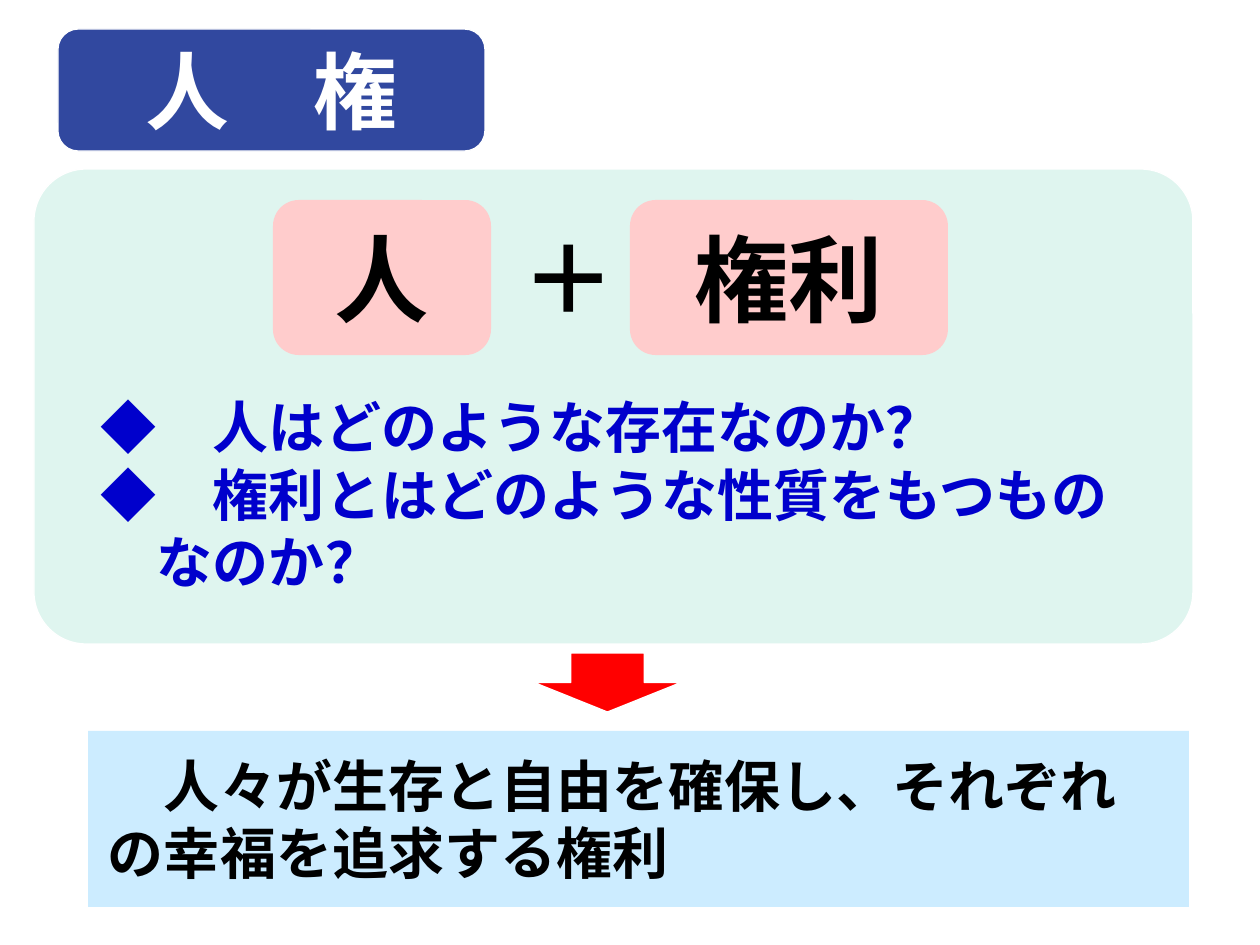
from pptx import Presentation
from pptx.dml.color import RGBColor
from pptx.enum.shapes import MSO_SHAPE as Shape
from pptx.enum.text import MSO_ANCHOR as Anchor, PP_ALIGN as Align
from pptx.oxml.ns import qn
from pptx.util import Emu, Pt
from lxml.etree import SubElement

WHITE = RGBColor(0xFF, 0xFF, 0xFF)
BLACK = RGBColor(0x00, 0x00, 0x00)
MINT = RGBColor(0xDF, 0xF5, 0xEF)
NAVY = RGBColor(0x31, 0x48, 0x9F)
PINK = RGBColor(0xFF, 0xCC, 0xCC)
BLUE = RGBColor(0x00, 0x00, 0xCC)
SKY = RGBColor(0xCC, 0xEC, 0xFF)
RED = RGBColor(0xFF, 0x00, 0x00)


class SlideBuilder:
    """Holds the slide, its scale and its text style."""

    font = "Noto Sans CJK JP"
    scale = 914400 / 126

    def __init__(self, deck):
        deck.slide_width, deck.slide_height = self.px(1260), self.px(945)
        self.page = deck.slides.add_slide(deck.slide_layouts[6])

    def px(self, length):
        return Emu(round(length * self.scale))

    def shape(self, kind, frame, fill, line=None):
        box = self.page.shapes.add_shape(kind, *map(self.px, frame))
        box.shadow.inherit = False
        box.fill.solid()
        box.fill.fore_color.rgb = fill
        if line is None:
            box.line.fill.background()
        else:
            box.line.color.rgb = line
            box.line.width = Pt(0.75)
        return box

    def textbox(self, frame, lines, size, color):
        box = self.page.shapes.add_textbox(*map(self.px, frame))
        self.add_text(box, lines, size, color, Align.LEFT, Anchor.TOP)

    def add_text(self, box, lines, size, color=BLACK, align=Align.CENTER,
                 anchor=Anchor.MIDDLE, insets=(13, 6)):
        frame = box.text_frame
        frame.word_wrap = True
        frame.vertical_anchor = anchor
        frame.margin_left = frame.margin_right = self.px(insets[0])
        frame.margin_top = frame.margin_bottom = self.px(insets[1])
        for index, line in enumerate(lines):
            para = frame.add_paragraph() if index else frame.paragraphs[0]
            para.alignment = align
            span = para.add_run()
            span.text = line
            span.font.size = Pt(size)
            span.font.bold = True
            span.font.color.rgb = color
            span.font.name = self.font
            SubElement(span.font._element, qn("a:ea"), typeface=self.font)


def main():
    deck = Presentation()
    slide = SlideBuilder(deck)

    panel = slide.shape(Shape.ROUNDED_RECTANGLE, (34, 169, 1159, 475), MINT, WHITE)
    panel.adjustments[0] = 0.11

    title = slide.shape(Shape.ROUNDED_RECTANGLE, (58, 29, 427, 122), NAVY, WHITE)
    slide.add_text(title, ["人　権"], 48, WHITE, insets=(10, 0))

    for left, width, word in ((273, 218, "人"), (630, 318, "権利")):
        card = slide.shape(Shape.ROUNDED_RECTANGLE, (left, 200, width, 155), PINK)
        slide.add_text(card, [word], 54)
    slide.textbox((509, 214, 89, 127), ["＋"], 54, BLACK)

    questions = ["◆　人はどのような存在なのか？",
                 "◆　権利とはどのような性質をもつもの",
                 "　なのか？"]
    slide.textbox((88, 387, 1082, 217), questions, 32, BLUE)

    answer = slide.shape(Shape.RECTANGLE, (88, 731, 1101, 176), SKY)
    slide.add_text(answer, ["　人々が生存と自由を確保し、それぞれの幸福を追求する権利"],
                   32, align=Align.LEFT, insets=(20, 20))

    slide.shape(Shape.DOWN_ARROW, (534, 653, 147, 59), RED, WHITE)
    deck.save("out.pptx")


if __name__ == "__main__":
    main()
